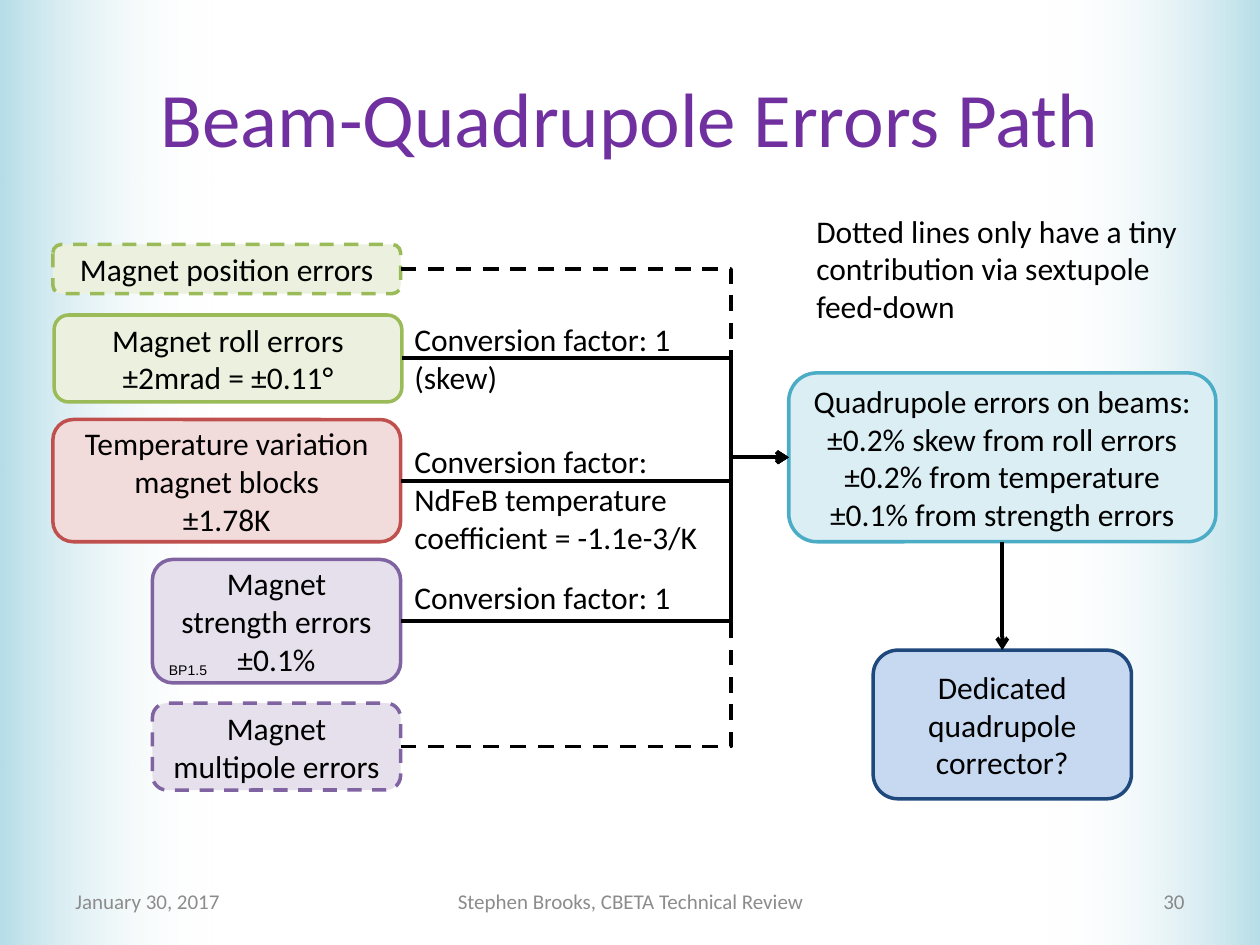
"""Builds the slide that traces magnet errors to quadrupole errors on the beams."""
from typing import NamedTuple

from lxml.etree import SubElement
from pptx import Presentation
from pptx.dml.color import RGBColor
from pptx.enum.dml import MSO_LINE
from pptx.enum.shapes import MSO_CONNECTOR as CONN, MSO_SHAPE as SHAPE
from pptx.enum.text import MSO_ANCHOR as ANCHOR, PP_ALIGN as ALIGN
from pptx.oxml.ns import qn
from pptx.util import Inches, Pt

BUS_X, TARGET_X, TARGET_Y = 5.8, 6.26, 3.63


class Box(NamedTuple):
    left: float
    top: float
    width: float
    height: float
    fill: str
    line: str
    text: str
    dashed: bool = False


class Label(NamedTuple):
    left: float
    top: float
    width: float
    height: float
    text: str
    style: dict = {}


SOURCES = [
    Box(0.42, 1.94, 2.76, 0.39, "EBF1DE", "9BBB59", "Magnet position errors", True),
    Box(0.43, 2.5, 2.76, 0.69, "EBF1DE", "9BBB59", "Magnet roll errors\n±2mrad = ±0.11°"),
    Box(0.42, 3.33, 2.76, 0.97, "F2DCDB", "C0504D",
        "Temperature variation magnet blocks\n±1.78K"),
    Box(1.21, 5.58, 1.97, 0.69, "E6E0EC", "8064A2", "Magnet multipole errors", True),
    Box(1.21, 4.44, 1.97, 0.98, "E6E0EC", "8064A2", "Magnet strength errors\n±0.1%"),
]
RESULTS = [
    Box(TARGET_X, 2.96, 3.39, 1.34, "DBEEF4", "4BACC6",
        "Quadrupole errors on beams:\n±0.2% skew from roll errors\n"
        "±0.2% from temperature\n±0.1% from strength errors"),
    Box(6.93, 5.16, 2.05, 1.18, "C6D9F1", "1F497D", "Dedicated quadrupole corrector?"),
]
FOOTER = dict(size=12, color="8C8C8C", anchor=ANCHOR.MIDDLE)
LABELS = [
    Label(0.5, 0.3, 9, 1.25, "Beam-Quadrupole Errors Path",
          dict(size=44, color="7030A0", align=ALIGN.CENTER, anchor=ANCHOR.MIDDLE)),
    Label(0.5, 6.95, 2.33, 0.4, "January 30, 2017", FOOTER),
    Label(3.42, 6.95, 3.17, 0.4, "Stephen Brooks, CBETA Technical Review",
          FOOTER | dict(align=ALIGN.CENTER)),
    Label(7.17, 6.95, 2.33, 0.4, "30", FOOTER | dict(align=ALIGN.RIGHT, color="898989")),
    Label(6.38, 1.63, 3.15, 1.01,
          "Dotted lines only have a tiny contribution via sextupole feed-down"),
    Label(3.19, 2.49, 2.59, 0.71, "Conversion factor: 1 (skew)"),
    Label(3.19, 4.54, 2.67, 0.4, "Conversion factor: 1"),
    Label(3.19, 3.46, 2.52, 1.01,
          "Conversion factor:\nNdFeB temperature coefficient = -1.1e-3/K"),
    Label(1.3, 5.21, 0.39, 0.21, "BP1.5",
          dict(size=8, font="Arial", wrap=False, inset=0.04)),
]


def rgb(code: str) -> RGBColor:
    return RGBColor.from_string(code)


def write(sp, text: str, *, size=18, font="Calibri", color="000000", align=ALIGN.LEFT,
          anchor=ANCHOR.TOP, wrap=True, inset=None) -> None:
    tf = sp.text_frame
    tf.word_wrap, tf.vertical_anchor = wrap, anchor
    if inset is not None:
        tf.margin_left = tf.margin_right = tf.margin_top = tf.margin_bottom = Inches(inset)
    for i, line in enumerate(text.split("\n")):
        p = tf.add_paragraph() if i else tf.paragraphs[0]
        p.alignment = align
        r = p.add_run()
        r.text = line
        r.font.size, r.font.name = Pt(size), font
        r.font.color.rgb = rgb(color)


def add_edge(s, left: float, rotation: float) -> None:
    sp = s.shapes.add_shape(SHAPE.RECTANGLE, Inches(left), 0, Inches(1.69), Inches(7.5))
    sp.rotation, sp.shadow.inherit = rotation, False
    sp.line.fill.background()
    sp.fill.gradient()
    sp.fill.gradient_angle = 0
    for stop, code in zip(sp.fill.gradient_stops, ("B7DEE8", "FFFFFF")):
        stop.color.rgb = rgb(code)
    end = sp.element.xpath(".//a:gs/a:srgbClr")[-1]
    SubElement(end, qn("a:alpha")).set("val", "0")


def add_box(s, box: Box) -> None:
    sp = s.shapes.add_shape(SHAPE.ROUNDED_RECTANGLE, *map(Inches, box[:4]))
    sp.shadow.inherit = False
    sp.fill.solid()
    sp.fill.fore_color.rgb = rgb(box.fill)
    sp.line.color.rgb, sp.line.width = rgb(box.line), Pt(2)
    if box.dashed:
        sp.line.dash_style = MSO_LINE.DASH
    write(sp, box.text, align=ALIGN.CENTER, anchor=ANCHOR.MIDDLE)


def add_arrow(s, x1: float, y1: float, x2: float, y2: float, *,
              bend_x: float | None = None, dashed: bool = False) -> None:
    kind = CONN.STRAIGHT if bend_x is None else CONN.ELBOW
    cx = s.shapes.add_connector(kind, *map(Inches, (x1, y1, x2, y2)))
    cx.line.color.rgb, cx.line.width = rgb("000000"), Pt(2.25)
    if dashed:
        cx.line.dash_style = MSO_LINE.DASH
    if bend_x is not None:
        guides = cx.element.xpath(".//a:prstGeom/a:avLst")[0]
        share = round((bend_x - x1) / (x2 - x1) * 100000)
        gd = SubElement(guides, qn("a:gd"))
        gd.set("name", "adj1")
        gd.set("fmla", f"val {share}")
    SubElement(cx.line._get_or_add_ln(), qn("a:tailEnd")).set("type", "arrow")
    SubElement(cx.element.spPr, qn("a:effectLst"))


def add_label(s, label: Label) -> None:
    sp = s.shapes.add_textbox(*map(Inches, label[:4]))
    write(sp, label.text, **label.style)


def main() -> None:
    prs = Presentation()
    prs.slide_width, prs.slide_height = Inches(10), Inches(7.5)
    s = prs.slides.add_slide(prs.slide_layouts[6])
    add_edge(s, 8.31, 180)
    add_edge(s, 0, 0)
    for box in SOURCES + RESULTS:
        add_box(s, box)
    for box in SOURCES:
        add_arrow(s, box.left + box.width, box.top + box.height / 2, TARGET_X, TARGET_Y,
                  bend_x=BUS_X, dashed=box.dashed)
    beams, corrector = RESULTS
    middle = corrector.left + corrector.width / 2
    add_arrow(s, middle, beams.top + beams.height, middle, corrector.top)
    for label in LABELS:
        add_label(s, label)
    prs.save("out.pptx")


if __name__ == "__main__":
    main()
